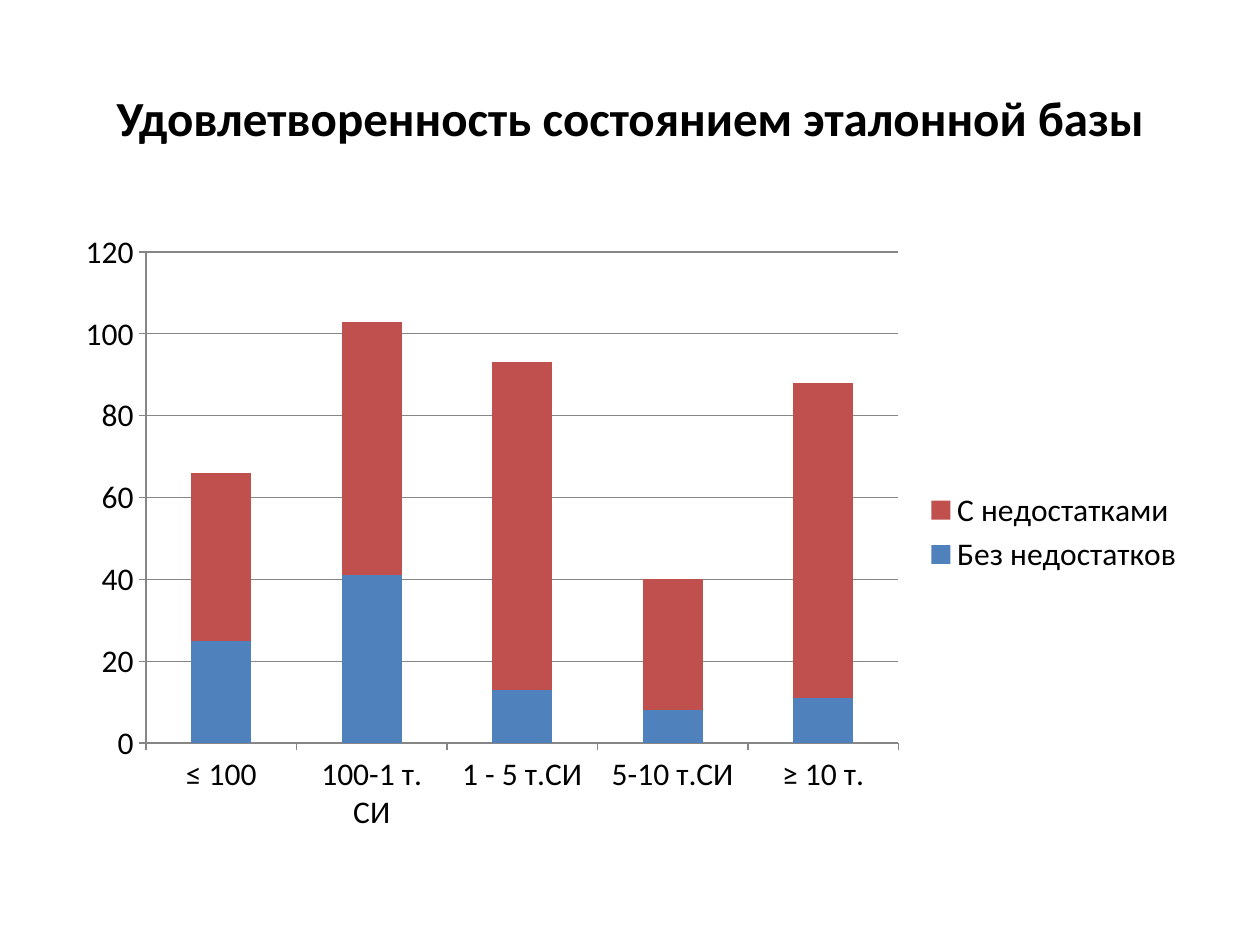
from pptx import Presentation
from pptx.chart.data import CategoryChartData
from pptx.dml.color import RGBColor
from pptx.enum.chart import XL_CHART_TYPE, XL_LEGEND_POSITION, XL_TICK_MARK
from pptx.enum.text import MSO_ANCHOR, PP_ALIGN
from pptx.util import Pt

STACKED = XL_CHART_TYPE.COLUMN_STACKED
LEGEND_RIGHT = XL_LEGEND_POSITION.RIGHT
TICK_OUTSIDE = XL_TICK_MARK.OUTSIDE
MIDDLE = MSO_ANCHOR.MIDDLE
CENTER = PP_ALIGN.CENTER

FONT = "Calibri"
COLORS = {
    "text": "000000",
    "line": "868686",
    "Без недостатков": "4F81BD",
    "С недостатками": "C0504D",
}
SIZE_GROUPS = ["≤ 100", "100-1 т. СИ", "1 - 5 т.СИ", "5-10 т.СИ", "≥ 10 т."]
ANSWERS = {
    "Без недостатков": [25, 41, 13, 8, 11],
    "С недостатками": [41, 62, 80, 32, 77],
}


def color(name):
    """Return the named colour."""
    return RGBColor.from_string(COLORS[name])


def apply_format(target, values):
    """Set each attribute of the target from a dict."""
    for attribute, value in values.items():
        setattr(target, attribute, value)


def format_font(font, size, bold):
    """Give a font the slide's typeface and text colour."""
    apply_format(font, {"name": FONT, "size": Pt(size), "bold": bold})
    font.color.rgb = color("text")


def place(shape, box):
    """Move a shape to a box given in points."""
    apply_format(shape, dict(zip(("left", "top", "width", "height"), map(Pt, box))))


def add_heading(slide, box, wording):
    """Fill the title placeholder inside the box."""
    heading = slide.shapes.title
    place(heading, box)
    apply_format(heading.text_frame, {"text": wording, "vertical_anchor": MIDDLE, "word_wrap": True})
    paragraph = heading.text_frame.paragraphs[0]
    paragraph.alignment = CENTER
    format_font(paragraph.runs[0].font, 28, True)


def add_satisfaction_chart(slide, box):
    """Draw the stacked answers by size group inside the box."""
    answers = CategoryChartData()
    answers.categories = SIZE_GROUPS
    for answer, counts in ANSWERS.items():
        answers.add_series(answer, counts)
    chart = slide.shapes.add_chart(STACKED, *map(Pt, box), answers).chart
    apply_format(chart, {"has_title": False, "has_legend": True})
    apply_format(chart.legend, {"position": LEGEND_RIGHT, "include_in_layout": False})
    format_font(chart.font, 18, False)

    plot = chart.plots[0]
    apply_format(plot, {"gap_width": 150, "overlap": 100, "vary_by_categories": False})
    for series in plot.series:
        series.format.fill.solid()
        series.format.fill.fore_color.rgb = color(series.name)

    counts_axis, groups_axis = chart.value_axis, chart.category_axis
    apply_format(counts_axis, {
        "minimum_scale": 0, "maximum_scale": 120, "major_unit": 20, "has_major_gridlines": True,
    })
    for axis in (counts_axis, groups_axis):
        axis.major_tick_mark = TICK_OUTSIDE
    for ruled in (counts_axis, groups_axis, counts_axis.major_gridlines):
        ruled.format.line.color.rgb = color("line")
        ruled.format.line.width = Pt(0.75)


def main():
    """Build and save the slide."""
    presentation = Presentation()
    apply_format(presentation, {"slide_width": Pt(720), "slide_height": Pt(540)})
    slide = presentation.slides.add_slide(presentation.slide_layouts[5])
    add_heading(slide, (36, 21.6, 648, 90), "Удовлетворенность состоянием эталонной базы")
    add_satisfaction_chart(slide, (36, 126, 648, 356.4))
    presentation.save("out.pptx")


if __name__ == "__main__":
    main()
